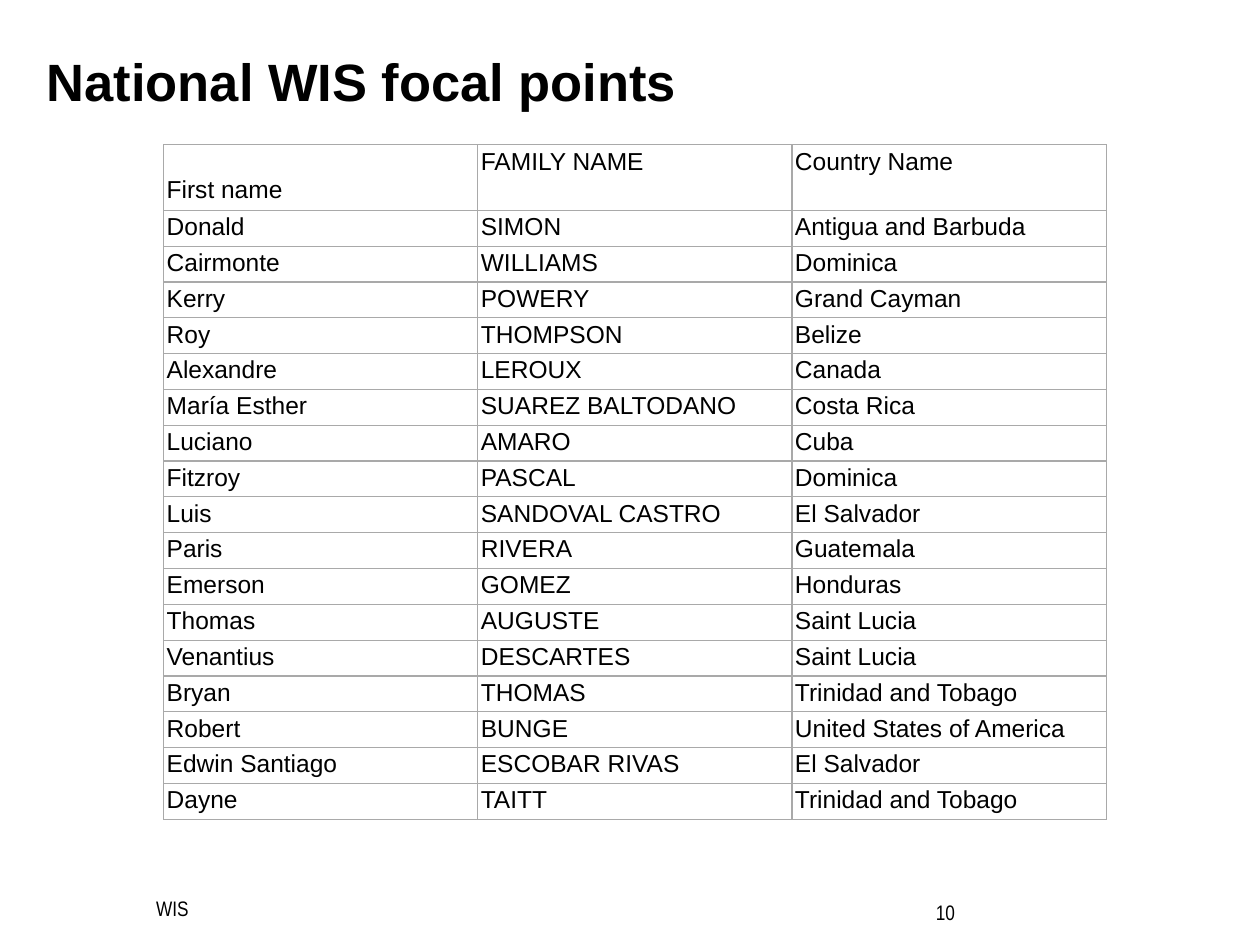
from lxml.etree import SubElement
from pptx import Presentation
from pptx.dml.color import RGBColor
from pptx.enum.text import MSO_ANCHOR, MSO_AUTO_SIZE, PP_ALIGN
from pptx.oxml.ns import qn
from pptx.util import Cm, Pt

HEADINGS = ("First name", "FAMILY NAME", "Country Name")
FOCAL_POINTS = [
    ("Donald", "SIMON", "Antigua and Barbuda"),
    ("Cairmonte", "WILLIAMS", "Dominica"),
    ("Kerry", "POWERY", "Grand Cayman"),
    ("Roy", "THOMPSON", "Belize"),
    ("Alexandre", "LEROUX", "Canada"),
    ("María Esther", "SUAREZ BALTODANO", "Costa Rica"),
    ("Luciano", "AMARO", "Cuba"),
    ("Fitzroy", "PASCAL", "Dominica"),
    ("Luis", "SANDOVAL CASTRO", "El Salvador"),
    ("Paris", "RIVERA", "Guatemala"),
    ("Emerson", "GOMEZ", "Honduras"),
    ("Thomas", "AUGUSTE", "Saint Lucia"),
    ("Venantius", "DESCARTES", "Saint Lucia"),
    ("Bryan", "THOMAS", "Trinidad and Tobago"),
    ("Robert", "BUNGE", "United States of America"),
    ("Edwin Santiago", "ESCOBAR RIVAS", "El Salvador"),
    ("Dayne", "TAITT", "Trinidad and Tobago"),
]


def color(value):
    """Return the colour for a hex string."""
    return RGBColor.from_string(value)


def write(text_frame, text, size, font_name="Arial", bold=False, align=PP_ALIGN.LEFT):
    """Put one formatted paragraph into a text frame."""
    text_frame.text = text
    paragraph = text_frame.paragraphs[0]
    paragraph.alignment = align
    font = paragraph.runs[0].font
    font.size, font.name, font.bold = Pt(size), font_name, bold
    font.color.rgb = color("000000")


def add_title(slide, left, top, width, height):
    """Place and format the title placeholder."""
    title = slide.shapes.title
    title.left, title.top, title.width, title.height = left, top, width, height
    title.text_frame.auto_size = MSO_AUTO_SIZE.NONE
    title.text_frame.vertical_anchor = MSO_ANCHOR.MIDDLE
    write(title.text_frame, "National WIS focal points", 30, bold=True)


def add_footer_text(slide, text, left, top, width, height, align=PP_ALIGN.LEFT):
    """Add a small text at the foot of the slide."""
    text_frame = slide.shapes.add_textbox(left, top, width, height).text_frame
    text_frame.word_wrap = True
    write(text_frame, text, 12, "Arial Narrow", align=align)


def add_borders(cell, line_color, line_width):
    """Draw a thin line on all four sides of a cell."""
    properties = cell._tc.get_or_add_tcPr()
    for index, side in enumerate(("lnL", "lnR", "lnT", "lnB")):
        line = properties.makeelement(qn(f"a:{side}"), {"w": str(line_width)})
        fill = SubElement(line, qn("a:solidFill"))
        SubElement(fill, qn("a:srgbClr"), val=line_color)
        properties.insert(index, line)


def format_cell(cell, text):
    """Fill, border and write one table cell."""
    cell.margin_left = cell.margin_right = Cm(0.06)
    cell.margin_top = cell.margin_bottom = Cm(0.06)
    cell.fill.solid()
    cell.fill.fore_color.rgb = color("FFFFFF")
    add_borders(cell, "A9A9A9", Pt(0.75))
    write(cell.text_frame, text, 14)


def add_focal_point_table(slide, left, top, width, height):
    """Add the table of names with a taller heading row."""
    records = [HEADINGS, *FOCAL_POINTS]
    frame = slide.shapes.add_table(
        len(records), len(HEADINGS), left, top, width, height
    )
    table = frame.table
    table.first_row = table.horz_banding = False
    heading_height = Cm(1.32)
    row_height = (height - heading_height) // len(FOCAL_POINTS)
    for row_index, record in enumerate(records):
        table.rows[row_index].height = row_height if row_index else heading_height
        for column_index, text in enumerate(record):
            format_cell(table.cell(row_index, column_index), text)
    first_heading = table.cell(0, 0)
    first_heading.vertical_anchor = MSO_ANCHOR.BOTTOM
    first_heading.margin_bottom = Cm(0.14)


def main():
    """Build and save the slide."""
    presentation = Presentation()
    presentation.slide_width, presentation.slide_height = Cm(25.4), Cm(19.05)
    slide = presentation.slides.add_slide(presentation.slide_layouts[5])
    add_title(slide, Cm(0.69), Cm(0.53), Cm(24.2), Cm(2.2))
    add_footer_text(slide, "WIS", Cm(2.9), Cm(17.93), Cm(12.4), Cm(0.86))
    add_footer_text(
        slide, "10", Cm(16.3), Cm(18), Cm(3.2), Cm(0.86), PP_ALIGN.RIGHT
    )
    add_focal_point_table(slide, Cm(3.3), Cm(2.92), Cm(19), Cm(13.6))
    presentation.save("out.pptx")


if __name__ == "__main__":
    main()
